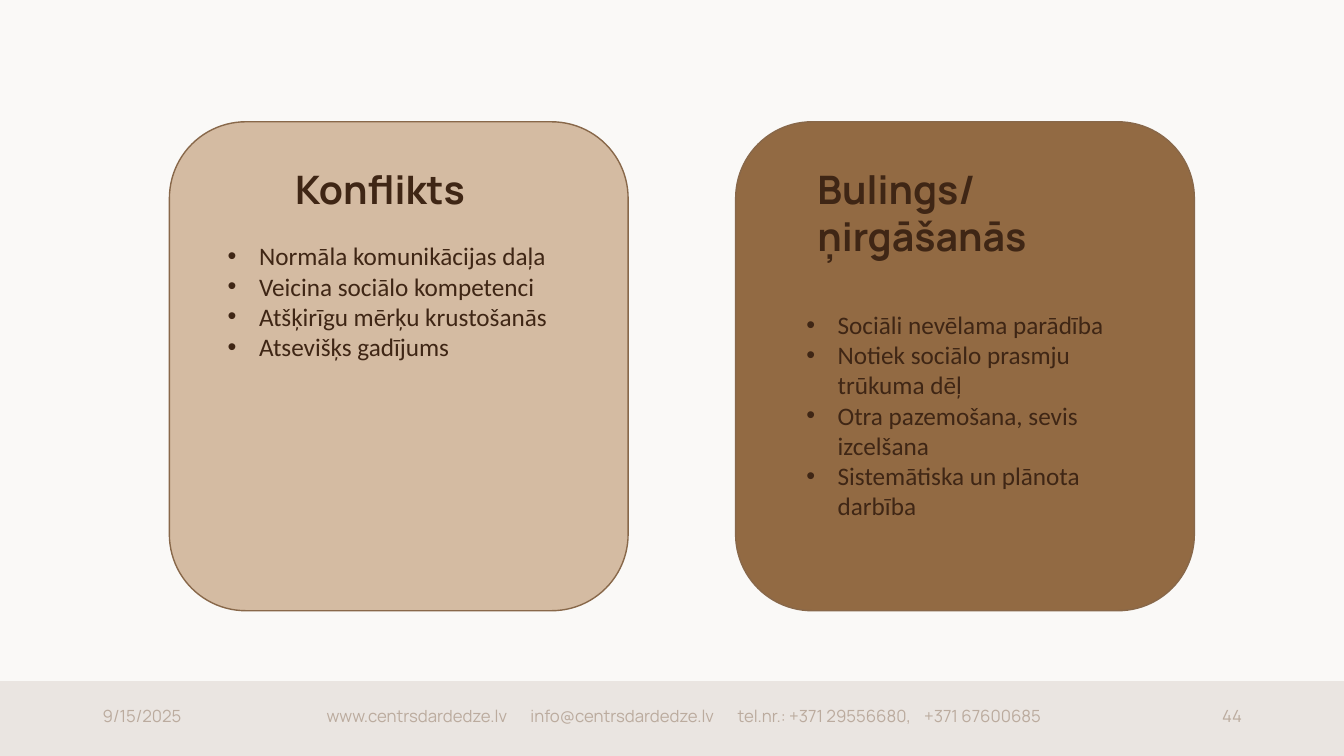
"""Build a slide comparing conflict and bullying on two cards."""
from dataclasses import dataclass

from lxml.etree import SubElement
from pptx import Presentation
from pptx.dml.color import RGBColor
from pptx.enum.shapes import MSO_SHAPE
from pptx.enum.text import PP_ALIGN
from pptx.oxml.ns import qn
from pptx.util import Cm, Pt

DARK, MUTED, BAND, BORDER = "3F2615", "BBAB9E", "EAE5E1", "88684A"
INDENT = Cm(0.79)


@dataclass
class Box:
    left: float
    top: float
    width: float
    height: float

    def emu(self) -> tuple:
        return Cm(self.left), Cm(self.top), Cm(self.width), Cm(self.height)


@dataclass
class Card:
    left: float
    fill: str
    title: str
    title_box: Box
    points: str
    points_box: Box


CARDS = [
    Card(4.27, "D4BBA2", "Konflikts", Box(7.19, 4.04, 7.09, 1.45),
         "Normāla komunikācijas daļa\nVeicina sociālo kompetenci\n"
         "Atšķirīgu mērķu krustošanās\nAtsevišķs gadījums",
         Box(5.49, 5.94, 9.12, 4.11)),
    Card(18.54, "926A43", "Bulings/\nņirgāšanās", Box(20.35, 4.04, 7.59, 2.64),
         "Sociāli nevēlama parādība\nNotiek sociālo prasmju trūkuma dēļ\n"
         "Otra pazemošana, sevis izcelšana\nSistemātiska un plānota darbība",
         Box(20.07, 7.67, 8.31, 5.64)),
]
CONTACTS = ("www.centrsdardedze.lv\tinfo@centrsdardedze.lv\t"
            "tel.nr.: +371 29556680,\t+371 67600685")


def color(value: str) -> RGBColor:
    return RGBColor.from_string(value)


def add_block(slide, kind, box: Box, fill: str, line: str) -> None:
    sp = slide.shapes.add_shape(kind, *box.emu())
    sp.shadow.inherit = False
    sp.fill.solid()
    sp.fill.fore_color.rgb = color(fill)
    sp.line.color.rgb = color(line)
    sp.line.width = Pt(1)


def add_text(slide, box: Box, text: str, *, size: float, font: str = "Manrope",
             rgb: str = DARK, bold: bool = False, bullets: bool = False,
             align=PP_ALIGN.LEFT, inset: float = 0.25, tabs: tuple = ()) -> None:
    tf = slide.shapes.add_textbox(*box.emu()).text_frame
    tf.word_wrap = True
    tf.margin_left = Cm(inset)
    for i, line in enumerate(text.split("\n")):
        p = tf.paragraphs[0] if i == 0 else tf.add_paragraph()
        p.alignment = align
        pPr = p._p.get_or_add_pPr()
        if bullets:
            pPr.set("marL", str(INDENT))
            pPr.set("indent", str(-INDENT))
            SubElement(pPr, qn("a:buFont"), typeface="Arial")
            SubElement(pPr, qn("a:buChar"), char="•")
        if tabs:
            stops = SubElement(pPr, qn("a:tabLst"))
            for stop in tabs:
                SubElement(stops, qn("a:tab"), pos=str(Cm(stop)), algn="l")
        r = p.add_run()
        r.text = line
        r.font.name = font
        r.font.size = Pt(size)
        r.font.bold = bold
        r.font.color.rgb = color(rgb)


def add_card(slide, card: Card) -> None:
    add_block(slide, MSO_SHAPE.ROUNDED_RECTANGLE,
              Box(card.left, 3.07, 11.56, 12.32), card.fill, BORDER)
    add_text(slide, card.title_box, card.title, size=28, bold=True)
    add_text(slide, card.points_box, card.points, size=18, font="Calibri", bullets=True)


def add_footer(slide) -> None:
    add_block(slide, MSO_SHAPE.RECTANGLE, Box(0, 17.17, 33.87, 1.88), BAND, BAND)
    add_text(slide, Box(2.34, 17.65, 3.89, 1.02), "9/15/2025", size=12, rgb=MUTED)
    add_text(slide, Box(6.86, 17.65, 20.8, 1.02), CONTACTS, size=12, rgb=MUTED,
             inset=1.37, tabs=(5.14, 10.36, 15.06))
    add_text(slide, Box(27.66, 17.65, 3.89, 1.02), "44", size=12, rgb=MUTED,
             align=PP_ALIGN.RIGHT)


def main() -> None:
    prs = Presentation()
    prs.slide_width, prs.slide_height = Cm(33.87), Cm(19.05)
    slide = prs.slides.add_slide(prs.slide_layouts[6])
    slide.background.fill.solid()
    slide.background.fill.fore_color.rgb = color("FAF9F7")
    add_footer(slide)
    for card in CARDS:
        add_card(slide, card)
    prs.save("out.pptx")


if __name__ == "__main__":
    main()
